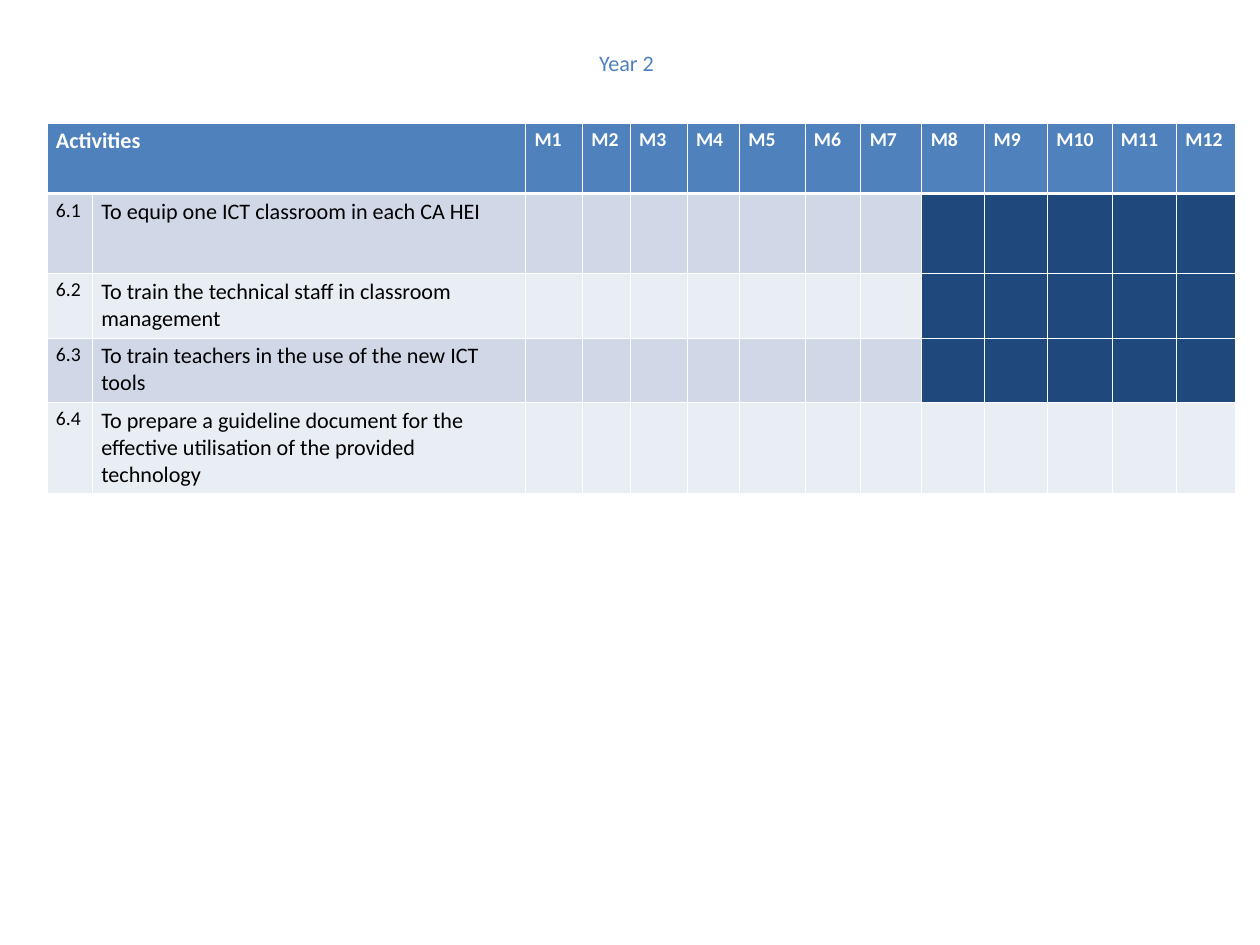
from dataclasses import dataclass

from lxml.etree import SubElement
from pptx import Presentation
from pptx.dml.color import RGBColor
from pptx.enum.text import MSO_ANCHOR, MSO_AUTO_SIZE, PP_ALIGN
from pptx.oxml.ns import qn
from pptx.util import Cm, Pt


@dataclass(frozen=True)
class Theme:
    font: str = "Calibri"
    accent: str = "4F81BD"
    planned: str = "1F497D"
    odd_row: str = "D0D8E8"
    even_row: str = "E9EDF4"
    light: str = "FFFFFF"
    dark: str = "000000"
    large: int = 18
    small: int = 16
    thin_line: int = 1
    thick_line: int = 3


THEME = Theme()
MONTHS = [f"M{number}" for number in range(1, 13)]
ACTIVITIES = [
    ("6.1", "To equip one ICT classroom in each CA HEI", range(8, 13)),
    ("6.2", "To train the technical staff in classroom management", range(8, 13)),
    ("6.3", "To train teachers in the use of the new ICT tools", range(8, 13)),
    ("6.4", "To prepare a guideline document for the effective utilisation "
            "of the provided technology", range(0)),
]
LABEL_COLUMNS = [1.3, 12.42]
MONTH_COLUMNS = [1.63, 1.37, 1.63, 1.5, 1.88, 1.6, 1.75, 1.8, 1.8, 1.85, 1.85, 1.7]
ROW_HEIGHTS = [2.03, 2.29, 1.85, 1.85, 2.59]


def write_text(text_frame, text, *, size, color, bold=False):
    paragraph = text_frame.paragraphs[0]
    paragraph.alignment = PP_ALIGN.LEFT
    run = paragraph.add_run()
    run.text = text
    run.font.name = THEME.font
    run.font.size = Pt(size)
    run.font.bold = bold
    run.font.color.rgb = RGBColor.from_string(color)


def set_borders(cell, top, bottom):
    properties = cell._tc.get_or_add_tcPr()
    widths = {"lnL": THEME.thin_line, "lnR": THEME.thin_line, "lnT": top, "lnB": bottom}
    for side, width in widths.items():
        line = SubElement(properties, qn(f"a:{side}"), w=str(Pt(width)))
        fill = SubElement(line, qn("a:solidFill"))
        SubElement(fill, qn("a:srgbClr"), val=THEME.light)


def style_cell(cell, color, top=THEME.thin_line, bottom=THEME.thin_line):
    set_borders(cell, top, bottom)
    cell.fill.solid()
    cell.fill.fore_color.rgb = RGBColor.from_string(color)


def add_title(slide, text):
    title = slide.shapes.title
    title.left, title.top = Cm(16.92), Cm(1.3)
    title.width, title.height = Cm(18.54), Cm(1.02)
    text_frame = title.text_frame
    text_frame.word_wrap = True
    text_frame.auto_size = MSO_AUTO_SIZE.SHAPE_TO_FIT_TEXT
    text_frame.vertical_anchor = MSO_ANCHOR.TOP
    write_text(text_frame, text, size=THEME.large, color=THEME.accent)


def fill_header(table):
    for column in range(len(table.columns)):
        style_cell(table.cell(0, column), THEME.accent, bottom=THEME.thick_line)
    table.cell(0, 0).merge(table.cell(0, 1))
    write_text(table.cell(0, 0).text_frame, "Activities",
               size=THEME.large, color=THEME.light, bold=True)
    for column, month in enumerate(MONTHS, start=len(LABEL_COLUMNS)):
        write_text(table.cell(0, column).text_frame, month,
                   size=THEME.small, color=THEME.light, bold=True)


def fill_activity(table, row, number, activity, planned_months):
    band = THEME.odd_row if row % 2 else THEME.even_row
    top = THEME.thick_line if row == 1 else THEME.thin_line
    for column in range(len(table.columns)):
        month = column - len(LABEL_COLUMNS) + 1
        color = THEME.planned if month in planned_months else band
        style_cell(table.cell(row, column), color, top=top)
    write_text(table.cell(row, 0).text_frame, number, size=THEME.small, color=THEME.dark)
    write_text(table.cell(row, 1).text_frame, activity, size=THEME.large, color=THEME.dark)


def add_schedule(slide):
    column_widths = LABEL_COLUMNS + MONTH_COLUMNS
    frame = slide.shapes.add_table(
        len(ROW_HEIGHTS), len(column_widths), Cm(1.35), Cm(3.53),
        Cm(sum(column_widths)), Cm(sum(ROW_HEIGHTS)))
    table = frame.table
    for column, width in zip(table.columns, column_widths):
        column.width = Cm(width)
    for row, height in zip(table.rows, ROW_HEIGHTS):
        row.height = Cm(height)
    fill_header(table)
    for row, activity in enumerate(ACTIVITIES, start=1):
        fill_activity(table, row, *activity)


def main():
    presentation = Presentation()
    presentation.slide_width = Cm(36.12)
    presentation.slide_height = Cm(27.1)
    slide = presentation.slides.add_slide(presentation.slide_layouts[5])
    add_title(slide, "Year 2")
    add_schedule(slide)
    presentation.save("out.pptx")


if __name__ == "__main__":
    main()
